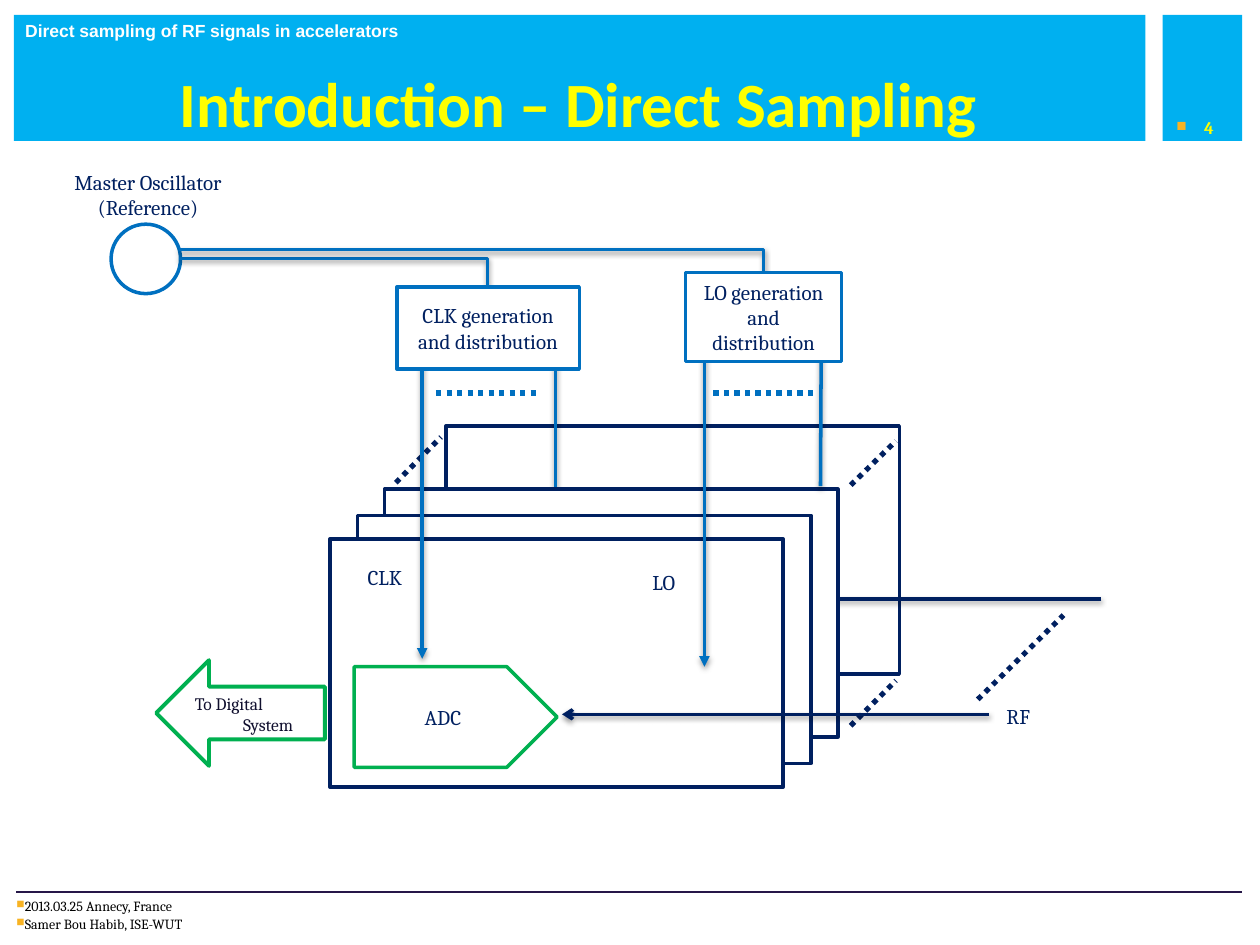
from lxml.etree import SubElement
from pptx import Presentation
from pptx.dml.color import RGBColor
from pptx.enum.dml import MSO_LINE
from pptx.enum.shapes import MSO_CONNECTOR as CONN, MSO_SHAPE as SHAPE
from pptx.enum.text import MSO_ANCHOR as ANCHOR, MSO_AUTO_SIZE as AUTO, PP_ALIGN as ALIGN
from pptx.oxml.ns import qn
from pptx.util import Cm, Pt

NAVY, BLUE, SKY, GREEN = "002060", "0070C0", "00B0F0", "00B050"
WHITE, YELLOW, ORANGE = "FFFFFF", "FFFF00", "F8B323"
INSETS = (0.25, 0.13, 0.25, 0.13)


def rgb(value):
    return RGBColor.from_string(value)


class Deck:
    """Holds the style and the current slide; all lengths are in cm."""

    font = "Cambria"

    def __init__(self, width, height):
        self.prs = Presentation()
        self.prs.slide_width, self.prs.slide_height = Cm(width), Cm(height)
        self.slide = self.prs.slides.add_slide(self.prs.slide_layouts[5])
        self.shapes = self.slide.shapes

    def fill_text(self, sp, text, size=12, color=NAVY, font=None, bold=False,
                  align=ALIGN.LEFT, anchor=ANCHOR.TOP, insets=INSETS, spacing=None,
                  hanging=0, bullet=False):
        tf = sp.text_frame
        tf.text = text
        tf.word_wrap, tf.auto_size, tf.vertical_anchor = True, AUTO.NONE, anchor
        (tf.margin_left, tf.margin_top,
         tf.margin_right, tf.margin_bottom) = (Cm(n) for n in insets)
        for p in tf.paragraphs:
            if bullet:
                self.bullet(p)
            if hanging:
                pPr = p._p.get_or_add_pPr()
                pPr.set("marL", str(Cm(hanging)))
                pPr.set("indent", str(-Cm(hanging)))
            p.alignment = align
            if spacing:
                p.line_spacing = spacing
            for r in p.runs:
                r.font.name, r.font.size, r.font.bold = font or self.font, Pt(size), bold
                r.font.color.rgb = rgb(color)

    def bullet(self, p):
        pPr = p._p.get_or_add_pPr()
        SubElement(SubElement(pPr, qn("a:buClr")), qn("a:srgbClr"), val=ORANGE)
        SubElement(pPr, qn("a:buSzPct"), val="80000")
        SubElement(pPr, qn("a:buFont"), typeface="Wingdings")
        SubElement(pPr, qn("a:buChar"), char="n")

    def title(self, text, box, **style):
        """Fill the title and bring it in front of the shapes drawn so far."""
        sp = self.shapes.title
        sp.left, sp.top, sp.width, sp.height = (Cm(n) for n in box)
        self.shapes._spTree.append(sp._element)
        self.fill_text(sp, text, **style)

    def text(self, text, box, **style):
        sp = self.shapes.add_textbox(*(Cm(n) for n in box))
        self.fill_text(sp, text, **style)

    def shape(self, kind, box, fill=None, line=None, width=2, text=None, flip=False, **style):
        sp = self.shapes.add_shape(kind, *(Cm(n) for n in box))
        sp.shadow.inherit = False
        if fill:
            sp.fill.solid()
            sp.fill.fore_color.rgb = rgb(fill)
        else:
            sp.fill.background()
        if line:
            sp.line.color.rgb, sp.line.width = rgb(line), Pt(width)
        else:
            sp.line.fill.background()
        if flip:
            sp._element.spPr.xfrm.set("flipH", "1")
        if text:
            self.fill_text(sp, text, **style)

    def block(self, text, box, line):
        self.shape(SHAPE.RECTANGLE, box, WHITE, line, text=text,
                   align=ALIGN.CENTER, anchor=ANCHOR.MIDDLE)

    def line(self, start, end, color, width=2, head=None, shadow=True, kind=CONN.STRAIGHT):
        c = self.shapes.add_connector(kind, *(Cm(n) for n in start + end))
        c.line.color.rgb, c.line.width = rgb(color), Pt(width)
        if head:
            SubElement(c.line._get_or_add_ln(), qn("a:tailEnd"), type=head)
        effects = SubElement(c._element.spPr, qn("a:effectLst"))
        if shadow:
            outer = SubElement(effects, qn("a:outerShdw"), blurRad=str(Pt(3.1)),
                               dist=str(Pt(1.6)), dir="5400000", rotWithShape="0")
            black = SubElement(outer, qn("a:srgbClr"), val="000000")
            SubElement(black, qn("a:alpha"), val="38000")
        return c

    def dots(self, start, end, color):
        self.line(start, end, color, 3, shadow=False).line.dash_style = MSO_LINE.ROUND_DOT

    def elbow(self, start, end):
        """Run right, then turn once and go down."""
        c = self.line(start, end, BLUE, kind=CONN.ELBOW)
        c._element.spPr.find(qn("a:prstGeom")).set("prst", "bentConnector2")

    def board(self, left, top):
        self.shape(SHAPE.RECTANGLE, (left, top, 9.14, 5), WHITE, NAVY)


def main():
    d = Deck(25.4, 19.05)
    middle = dict(align=ALIGN.CENTER, anchor=ANCHOR.MIDDLE)

    # Header and footer
    d.line((0.33, 17.98), (25.04, 17.98), "261748", 1, shadow=False)
    d.shape(SHAPE.RECTANGLE, (0.28, 0.3, 22.81, 2.54), SKY)
    d.text("Direct sampling of RF signals in accelerators", (0.28, 0.3, 20.78, 0.53),
           size=10, color=WHITE, font="Arial", bold=True, anchor=ANCHOR.BOTTOM,
           insets=(0.23, 0, 0.13, 0), spacing=1.1)
    d.title("Introduction – Direct Sampling", (0.28, 0.79, 22.81, 2.41), size=36,
            color=YELLOW, font="Calibri", bold=True, insets=(0.2, 0.13, 0.25, 0), **middle)
    d.shape(SHAPE.RECTANGLE, (23.44, 0.3, 1.6, 2.54), SKY, text="4", size=10, color=YELLOW,
            bold=True, align=ALIGN.CENTER, anchor=ANCHOR.BOTTOM,
            insets=(0.15, 0.13, 0.45, 0.05), hanging=0.56, bullet=True)
    d.text("2013.03.25 Annecy, France\nSamer Bou Habib, ISE-WUT", (0.33, 18.06, 15.85, 0.74),
           size=8, color="000000", anchor=ANCHOR.BOTTOM, insets=(0, 0, 0, 0),
           spacing=1.1, bullet=True)

    # Rearmost board and its clock line
    d.board(8.99, 8.59)
    d.line((11.2, 6.3), (11.2, 10.24), BLUE, head="triangle")
    d.dots((17.15, 14.63), (18.06, 13.72), NAVY)
    d.dots((17.15, 9.78), (18.06, 8.89), NAVY)

    # Reference oscillator
    d.shape(SHAPE.OVAL, (2.24, 4.52, 1.4, 1.4), line=BLUE)
    d.text("Master Oscillator (Reference)", (0.99, 3.28, 3.99, 1.27), align=ALIGN.CENTER)
    d.elbow((3.61, 5.21), (9.83, 5.79))
    d.dots((8.79, 7.92), (10.9, 7.92), BLUE)

    # Front boards and RF inputs
    d.line((22.2, 12.07), (13.67, 12.07), NAVY, head="arrow")
    for corner in ((7.75, 9.86), (7.21, 10.39), (6.65, 10.87)):
        d.board(*corner)
    d.line((19.94, 14.4), (11.33, 14.4), NAVY, head="arrow")
    d.dots((19.71, 14.1), (21.44, 12.4), NAVY)
    d.text("RF", (20.04, 14.05, 1.22, 0.76))
    d.shape(SHAPE.PENTAGON, (7.14, 13.44, 4.09, 2.03), WHITE, GREEN, text="ADC", **middle)
    d.shape(SHAPE.RIGHT_ARROW, (3.15, 13.31, 3.4, 2.13), line=GREEN, width=2.25, flip=True,
            text="To Digital System", size=10, color="100F2E", hanging=0.97)
    d.dots((7.98, 9.73), (8.89, 8.81), NAVY)

    # Clock distribution
    d.line((8.51, 6.25), (8.51, 13.28), BLUE, head="triangle")
    d.block("CLK generation and distribution", (8, 5.79, 3.68, 1.65), BLUE)
    d.text("CLK", (7.16, 11.25, 3.2, 0.76))

    # Local oscillator distribution
    d.text("LO", (12.9, 11.35, 3.2, 0.76))
    d.line((16.56, 5.92), (16.54, 9.8), BLUE)
    d.elbow((3.61, 5.03), (15.39, 5.49))
    d.dots((14.38, 7.92), (16.46, 7.92), BLUE)
    d.line((14.2, 5.94), (14.2, 13.44), BLUE, head="triangle")
    d.block("LO generation and distribution", (13.82, 5.49, 3.15, 1.8), BLUE)

    d.prs.save("out.pptx")


if __name__ == "__main__":
    main()
